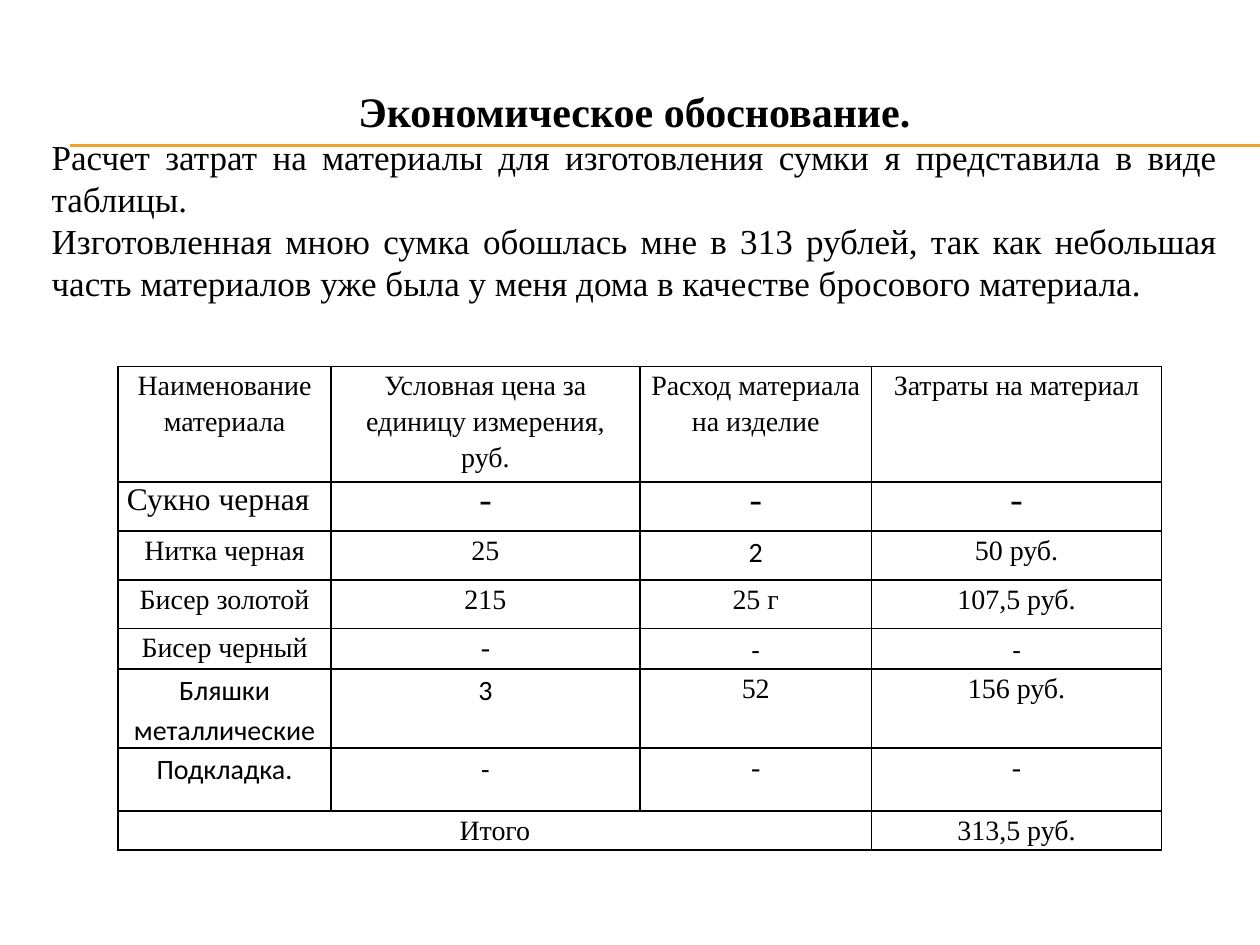
from dataclasses import dataclass

from lxml.etree import SubElement
from pptx import Presentation
from pptx.dml.color import RGBColor
from pptx.enum.shapes import MSO_CONNECTOR as Conn
from pptx.enum.text import MSO_ANCHOR as Anchor, MSO_AUTO_SIZE as AutoSize, PP_ALIGN as Align
from pptx.oxml.ns import qn
from pptx.util import Pt


@dataclass(frozen=True)
class Theme:
    ink: str = "000000"
    rule: str = "F0A22E"
    serif: str = "Times New Roman"
    sans: str = "Calibri"
    accent: str = "Cabin"
    title: int = 24
    body: int = 20
    large: int = 18
    cell: int = 16


T = Theme()
TITLE = "Экономическое обоснование."
BODY = [
    "Расчет затрат на материалы для изготовления сумки я представила в виде таблицы.",
    "Изготовленная мною сумка обошлась мне в 313 рублей, так как небольшая часть "
    "материалов уже была у меня дома в качестве бросового материала.",
]
COLS = [121.7, 176.4, 132.5, 165.6]
HEIGHTS = [66.2, 28, 28, 27.6, 23.3, 44, 36, 22.3]
ROWS = [
    ["Наименование материала", "Условная цена за единицу измерения, руб.",
     "Расход материала на изделие", "Затраты на материал"],
    ["Сукно черная", "-", "-", "-"],
    ["Нитка черная", "25", "2", "50 руб."],
    ["Бисер золотой", "215", "25 г", "107,5 руб."],
    ["Бисер черный", "-", "-", "-"],
    ["Бляшки металлические", "3", "52", "156 руб."],
    ["Подкладка.", "-", "-", "-"],
    ["Итого", "", "", "313,5 руб."],
]
CLOTH_ROW, TOTAL_ROW = 1, 7
SANS_CELLS = {(2, 2), (4, 2), (4, 3), (5, 0), (5, 1), (6, 0), (6, 1)}


def add_run(p, text, size, font=T.serif, bold=False):
    r = p.add_run()
    r.text = text
    r.font.size, r.font.name, r.font.bold = Pt(size), font, bold
    r.font.color.rgb = RGBColor.from_string(T.ink)


def add_rules(s, x, y, width, gap):
    for top in (y, y + gap):
        line = s.shapes.add_connector(Conn.STRAIGHT, Pt(x), Pt(top), Pt(x + width), Pt(top))
        line.line.color.rgb = RGBColor.from_string(T.rule)
        line.line.width = Pt(0.75)
        SubElement(line.element.spPr, qn("a:effectLst"))


def set_borders(cell):
    tcPr = cell._tc.get_or_add_tcPr()
    for side in ("lnL", "lnR", "lnT", "lnB"):
        ln = SubElement(tcPr, qn(f"a:{side}"), w=str(Pt(1)))
        fill = SubElement(ln, qn("a:solidFill"))
        SubElement(fill, qn("a:srgbClr"), val=T.ink)


def fill_cell(cell, text, row, col):
    set_borders(cell)
    cell.fill.background()
    cell.margin_left = cell.margin_right = Pt(5)
    cell.margin_top = cell.margin_bottom = 0
    if not text:
        return
    p = cell.text_frame.paragraphs[0]
    cloth = row == CLOTH_ROW
    p.alignment = Align.LEFT if cloth and col == 0 else Align.CENTER
    if not cloth:
        p.line_spacing = 1.15
    font = T.sans if (row, col) in SANS_CELLS else T.serif
    if cloth and col:
        font = T.accent
    add_run(p, text, T.large if cloth else T.cell, font)


def add_cost_table(s, x, y):
    frame = s.shapes.add_table(len(ROWS), len(COLS), Pt(x), Pt(y),
                               Pt(sum(COLS)), Pt(sum(HEIGHTS)))
    table = frame.table
    table.first_row = table.horz_banding = False
    for column, width in zip(table.columns, COLS):
        column.width = Pt(width)
    for row, height in zip(table.rows, HEIGHTS):
        row.height = Pt(height)
    for i, texts in enumerate(ROWS):
        for j, text in enumerate(texts):
            fill_cell(table.cell(i, j), text, i, j)
    table.cell(TOTAL_ROW, 0).merge(table.cell(TOTAL_ROW, 2))


def add_intro(s, x, y, width, height):
    sp = s.shapes.title
    sp.left, sp.top, sp.width, sp.height = Pt(x), Pt(y), Pt(width), Pt(height)
    tf = sp.text_frame
    tf.word_wrap = True
    tf.auto_size = AutoSize.SHAPE_TO_FIT_TEXT
    tf.vertical_anchor = Anchor.MIDDLE
    p = tf.paragraphs[0]
    p.alignment = Align.CENTER
    add_run(p, TITLE, T.title, bold=True)
    for text in BODY:
        p = tf.add_paragraph()
        p.alignment = Align.JUSTIFY
        add_run(p, text, T.body)
    sp.element.getparent().append(sp.element)


def main():
    prs = Presentation()
    prs.slide_width, prs.slide_height = Pt(720), Pt(540)
    s = prs.slides.add_slide(prs.slide_layouts[5])
    add_rules(s, 40.3, 82.8, 679.7, 0.7)
    add_cost_table(s, 67.5, 209.3)
    add_intro(s, 22.3, 44.6, 680.4, 133.2)
    prs.save("out.pptx")


if __name__ == "__main__":
    main()
